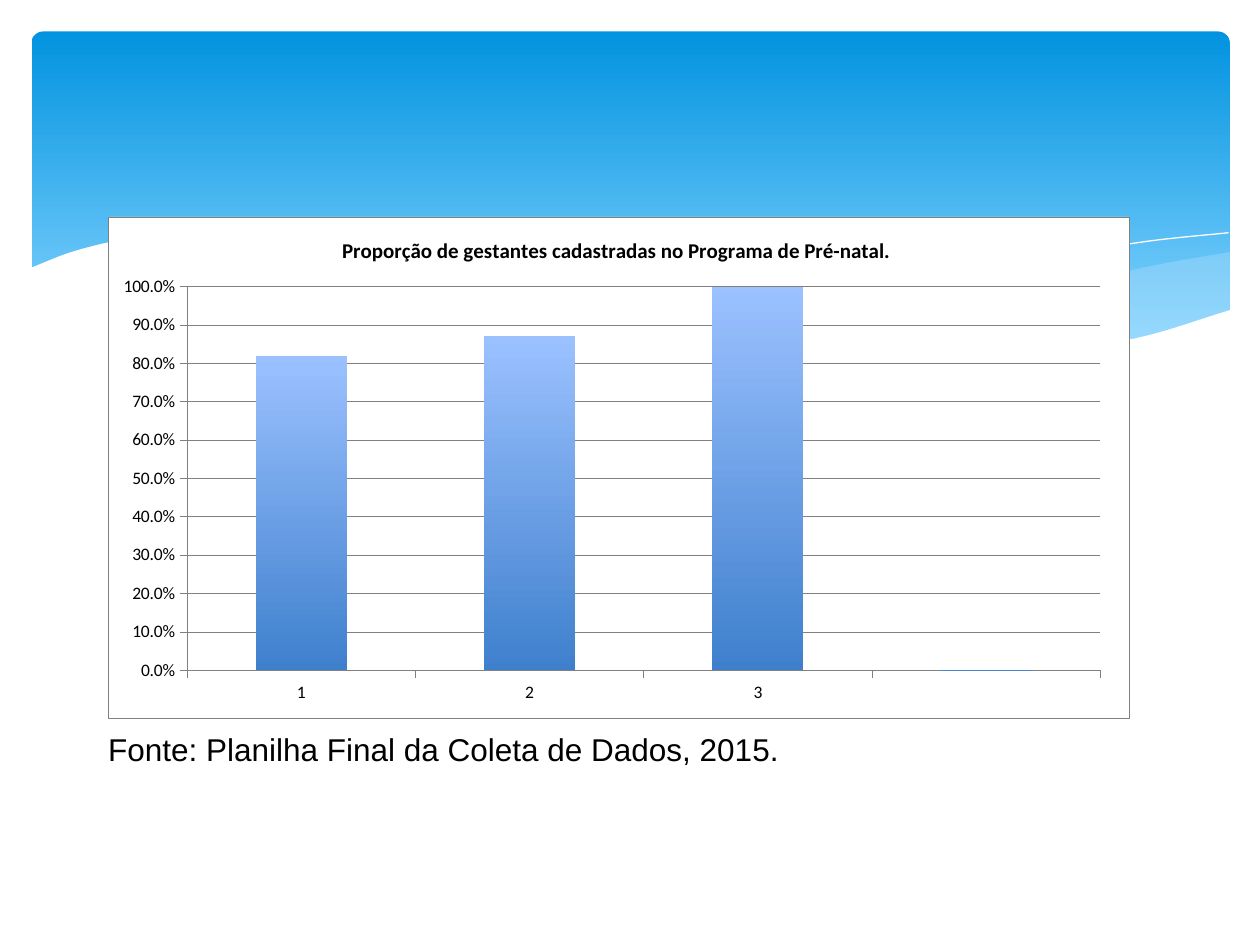
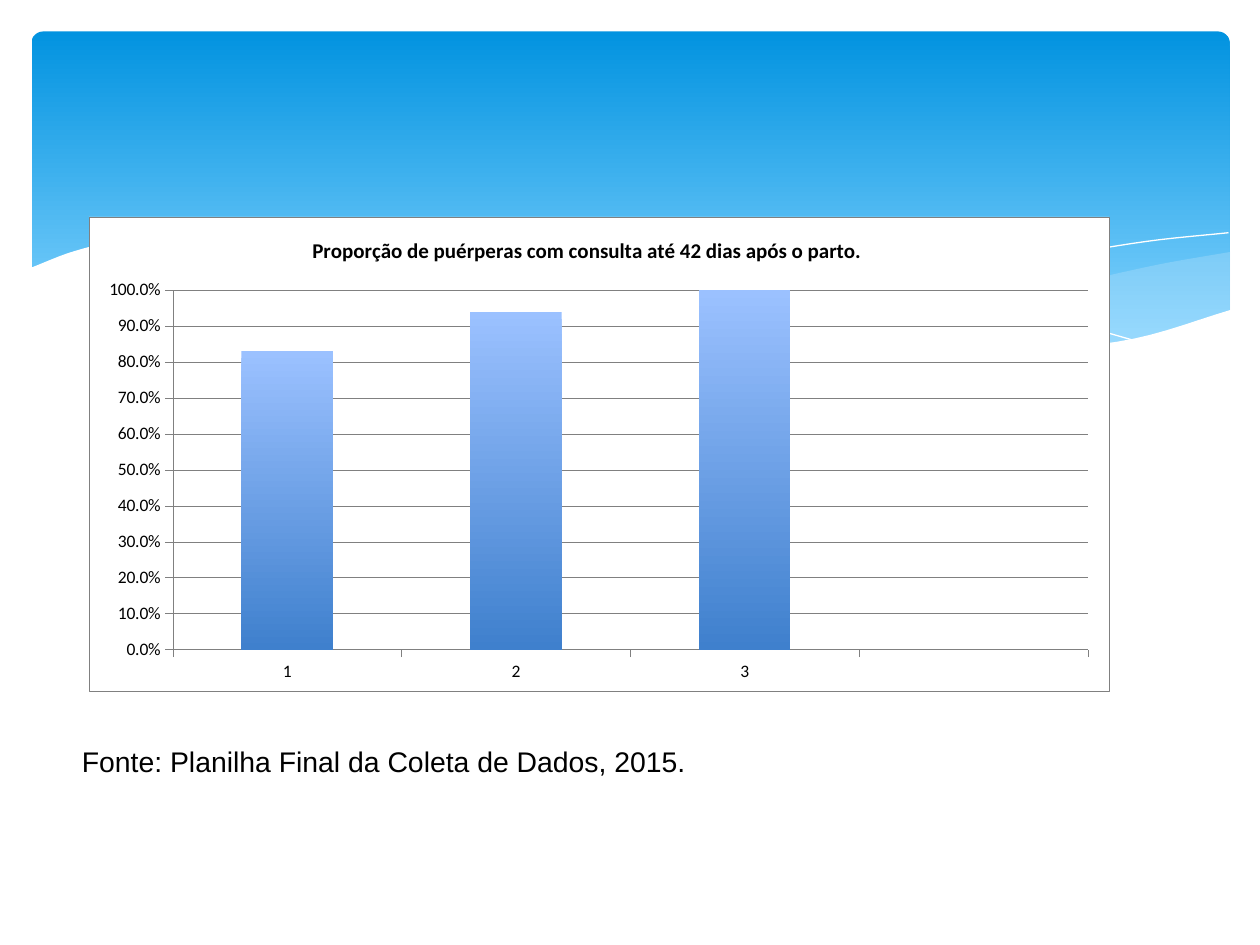
import pptx
import pptx.chart.data
import pptx.dml.color
import pptx.enum.chart
import pptx.enum.shapes
import pptx.enum.text
import pptx.oxml
import pptx.oxml.ns
import pptx.util

Pt = pptx.util.Pt
qn = pptx.oxml.ns.qn
nsdecls = pptx.oxml.ns.nsdecls

COLORS = {
    "white": "FFFFFF",
    "black": "000000",
    "band_top": "0293E0",
    "band_bottom": "83D3FE",
    "wave": "C6E7FC",
    "bar_top": "9BC1FF",
    "bar_bottom": "3F80CD",
    "rule": "808080",
}
SLIDE_W, SLIDE_H = 720, 540
MARGIN = 18
BAND_H = 194.4
PAGE_EDGE_BOTTOM = 237
CURVE_STEPS = 6
SOURCE = "Fonte: Planilha Final da Coleta de Dados, 2015."
SOURCE_H = 98.64
CHART_TOP, CHART_W = 123.84, 583.2
CATEGORIES = ["1", "2", "3", ""]

PAGE_EDGE = [(16.5, 153.5), (42.5, 143.5), (76, 136), (127, 132.5), (195, 135.5),
             (263, 145.5), (342, 163.5), (434, 183), (523, 196), (593, 199.5),
             (648, 193.5), (703.5, 177)]
RIGHT_WAVE_TOP = [(476, 191), (542, 178.5), (620, 160.5), (663, 151), (703, 144)]
RIGHT_WAVE_BOTTOM = [(476, 191), (527, 197), (578, 200), (634, 196.5),
                     (673, 188.5), (703, 178)]
MIDDLE_WAVE_TOP = [(206, 137.5), (260, 133), (335, 137.5), (410, 150),
                   (481, 166.5), (558, 183), (643, 196.5)]
MIDDLE_WAVE_BOTTOM = [(206, 137.5), (276, 149), (353.5, 167), (433, 183.5),
                      (500, 194.5), (565, 200), (610.5, 199.5), (643, 196.5)]
FALLING_LINE = [(222.5, 140.5), (261, 136), (312, 134.5), (367, 138), (438, 147),
                (523.5, 162.5), (598, 180.5), (653, 196)]
RISING_LINE = [(441, 185), (518, 165), (602, 147), (655, 138), (702, 133)]


def rgb(name):
    return pptx.dml.color.RGBColor.from_string(COLORS[name])


def set_gradient(fill, first, last, end=1.0):
    fill.gradient()
    fill.gradient_angle = 270
    for stop, name in zip(fill.gradient_stops, (first, last)):
        stop.color.rgb = rgb(name)
    fill.gradient_stops[1].position = end


def set_line(line, name, width):
    line.color.rgb = rgb(name)
    line.width = Pt(width)


def smooth_curve(knots):
    def slope(i):
        (x0, y0), (x1, y1) = knots[max(i - 1, 0)], knots[min(i + 1, len(knots) - 1)]
        return (y1 - y0) / (x1 - x0)

    points = [knots[0]]
    for i, ((x0, y0), (x1, y1)) in enumerate(zip(knots, knots[1:])):
        width = x1 - x0
        for step in range(1, CURVE_STEPS + 1):
            t = step / CURVE_STEPS
            ease = t * t * (3 - 2 * t)
            bend = t * (1 - t) * ((1 - t) * slope(i) - t * slope(i + 1))
            points.append((x0 + width * t, y0 + (y1 - y0) * ease + width * bend))
    return points


def add_outline(s, x, y, points, closed):
    emu = [(Pt(px), Pt(py)) for px, py in points]
    builder = s.shapes.build_freeform(*emu[0])
    builder.add_line_segments(emu[1:], close=closed)
    sp = builder.convert_to_shape(Pt(x), Pt(y))
    sp.shadow.inherit = False
    return sp


def add_curve(s, x, y, knots):
    sp = add_outline(s, x, y, smooth_curve(knots), closed=False)
    sp.fill.background()
    set_line(sp.line, "white", 0)


def add_wave(s, x, y, top, bottom, color, alpha=100):
    points = smooth_curve(top) + smooth_curve(bottom)[::-1]
    sp = add_outline(s, x, y, points, closed=True)
    sp.line.fill.background()
    sp.fill.solid()
    sp.fill.fore_color.rgb = rgb(color)
    if alpha < 100:
        next(sp.element.iter(qn("a:srgbClr"))).append(pptx.oxml.parse_xml(
            f'<a:alpha {nsdecls("a")} val="{alpha * 1000}"/>'))


def add_header_band(s, x, y):
    sp = s.shapes.add_shape(
        pptx.enum.shapes.MSO_SHAPE.ROUNDED_RECTANGLE, Pt(x + MARGIN),
        Pt(y + MARGIN), Pt(SLIDE_W - 2 * MARGIN + 0.72), Pt(BAND_H))
    sp.adjustments[0] = 0.034
    sp.shadow.inherit = False
    sp.line.fill.background()
    set_gradient(sp.fill, "band_top", "band_bottom", 0.9)

    add_wave(s, x, y, RIGHT_WAVE_TOP, RIGHT_WAVE_BOTTOM, "wave", 29)
    add_wave(s, x, y, MIDDLE_WAVE_TOP, MIDDLE_WAVE_BOTTOM, "wave", 40)
    for knots in (FALLING_LINE, RISING_LINE):
        add_curve(s, x, y, knots)
    page_bottom = [(px, PAGE_EDGE_BOTTOM) for px, _ in (PAGE_EDGE[0], PAGE_EDGE[-1])]
    add_wave(s, x, y, PAGE_EDGE, page_bottom, "white")


def add_source(s, box, size):
    tf = s.shapes.add_textbox(*map(Pt, box)).text_frame
    tf.word_wrap = True
    tf.vertical_anchor = pptx.enum.text.MSO_ANCHOR.MIDDLE
    p = tf.paragraphs[0]
    p.text = SOURCE
    p.alignment = pptx.enum.text.PP_ALIGN.CENTER
    font = p.runs[0].font
    font.name, font.size = "Arial", Pt(size)
    font.color.rgb = rgb("black")


def set_layout(parent, index, inner=False, **fractions):
    for old in parent.findall(qn("c:layout")):
        parent.remove(old)
    target = '<c:layoutTarget val="inner"/>' if inner else ""
    modes = "".join(f'<c:{k}Mode val="edge"/>' for k in "xy")
    sizes = "".join(f'<c:{k} val="{v}"/>' for k, v in fractions.items())
    parent.insert(index, pptx.oxml.parse_xml(
        f'<c:layout {nsdecls("c")}><c:manualLayout>'
        f'{target}{modes}{sizes}</c:manualLayout></c:layout>'))


def solid_fill(name):
    return f'<a:solidFill><a:srgbClr val="{COLORS[name]}"/></a:solidFill>'


def white_area(border):
    return pptx.oxml.parse_xml(
        f'<c:spPr {nsdecls("c", "a")}>{solid_fill("white")}'
        f'<a:ln w="{Pt(0.25)}">{border}</a:ln></c:spPr>')


def style_title(chart, title, x, y):
    chart.has_title = True
    p = chart.chart_title.text_frame.paragraphs[0]
    p.text = title
    font = p.runs[0].font
    font.name, font.size, font.bold = "Calibri", Pt(12), True
    font.color.rgb = rgb("black")
    set_layout(chart.chart_title.element, 1, x=x, y=y)


def style_axes(chart):
    ticks = pptx.enum.chart.XL_TICK_MARK
    for axis in (chart.category_axis, chart.value_axis):
        axis.major_tick_mark, axis.minor_tick_mark = ticks.OUTSIDE, ticks.NONE
        axis.tick_labels.font.size = Pt(10)
        set_line(axis.format.line, "rule", 0.25)
    axis = chart.value_axis
    axis.minimum_scale, axis.maximum_scale, axis.major_unit = 0, 1, 0.1
    axis.tick_labels.number_format = "0.0%"
    axis.tick_labels.number_format_is_linked = False
    axis.has_major_gridlines = True
    set_line(axis.major_gridlines.format.line, "rule", 0.25)


def add_bar_chart(s, box, title, values, title_at, plot):
    data = pptx.chart.data.CategoryChartData(number_format="0.0%")
    data.categories = CATEGORIES
    data.add_series(title, values)
    chart = s.shapes.add_chart(
        pptx.enum.chart.XL_CHART_TYPE.COLUMN_CLUSTERED,
        *map(Pt, box), data).chart
    chart.has_legend = False
    chart.font.name, chart.font.size = "Calibri", Pt(10)
    chart.font.color.rgb = rgb("black")
    style_title(chart, title, *title_at)
    style_axes(chart)

    bars = chart.plots[0]
    bars.gap_width = 150
    bars.vary_by_categories = False
    set_gradient(bars.series[0].format.fill, "bar_top", "bar_bottom")

    plot_area = next(chart.element.iter(qn("c:plotArea")))
    set_layout(plot_area, 0, inner=True, **dict(zip("xywh", plot)))
    plot_area.append(white_area("<a:noFill/>"))
    chart.element.find(qn("c:chart")).addnext(white_area(solid_fill("rule")))


def add_chart_slide(prs, source_box, source_size, **chart):
    s = prs.slides.add_slide(prs.slide_layouts[6])
    add_header_band(s, 0, 0)
    add_source(s, source_box, source_size)
    add_bar_chart(s, **chart)


def main():
    prs = pptx.Presentation()
    prs.slide_width, prs.slide_height = Pt(SLIDE_W), Pt(SLIDE_H)
    add_chart_slide(
        prs, (0, 378.5, 507, SOURCE_H), 18,
        box=(62, CHART_TOP, CHART_W, 286.5),
        title="Proporção de gestantes cadastradas no Programa de Pré-natal.",
        values=(0.82, 0.87, 1, 0),
        title_at=(0.225, 0.032), plot=(0.077, 0.139, 0.895, 0.766))
    add_chart_slide(
        prs, (0, 385.5, 438.5, SOURCE_H), 16.2,
        box=(50.8, CHART_TOP, CHART_W, 271.5),
        title="Proporção de puérperas com consulta até 42 dias após o parto.",
        values=(0.83, 0.94, 1, 0),
        title_at=(0.215, 0.033), plot=(0.082, 0.154, 0.897, 0.758))
    prs.save("out.pptx")


if __name__ == "__main__":
    main()
